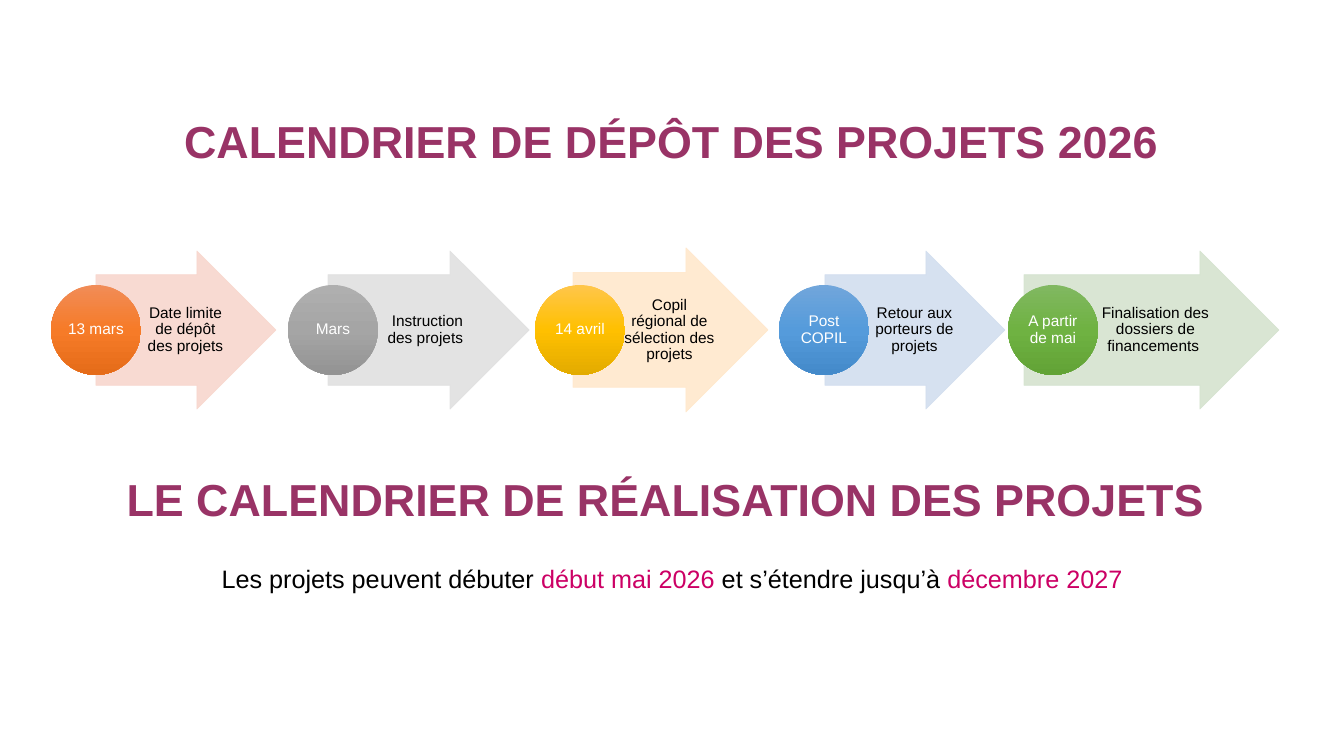
"""Build a slide with the project submission calendar and the delivery period."""
from copy import deepcopy

from lxml.etree import SubElement
from pptx import Presentation
from pptx.dml.color import RGBColor
from pptx.enum.shapes import MSO_SHAPE as Shape
from pptx.enum.text import MSO_ANCHOR as Anchor, PP_ALIGN as Align
from pptx.oxml.ns import qn
from pptx.util import Pt

PX = 9071
PLUM, MAGENTA, BLACK, WHITE = "993366", "CC0065", "000000", "FFFFFF"
MIDDLE_Y = 330
DIAMETER = 90
STEP_HEIGHT = 110

colour = RGBColor.from_string


def write_text(shape, *runs, size, bold=False, spacing=0.9,
               anchor=Anchor.MIDDLE, margins=(10, 5, 10, 5)):
    """Fill a shape with one centred paragraph of (text, colour) runs."""
    frame = shape.text_frame
    frame.word_wrap = True
    frame.vertical_anchor = anchor
    left, top, right, bottom = margins
    frame.margin_left, frame.margin_top = left * PX, top * PX
    frame.margin_right, frame.margin_bottom = right * PX, bottom * PX
    paragraph = frame.paragraphs[0]
    paragraph.alignment = Align.CENTER
    paragraph.line_spacing = spacing
    for text, hex_colour in runs:
        run = paragraph.add_run()
        run.text = text
        run.font.name = "Arial"
        run.font.size = Pt(size)
        run.font.bold = bold
        run.font.color.rgb = colour(hex_colour)


presentation = Presentation()
presentation.slide_width = 1344 * PX
presentation.slide_height = 756 * PX
slide = presentation.slides.add_slide(presentation.slide_layouts[5])
shapes = slide.shapes

title = shapes.title
title.left, title.top, title.width, title.height = 118 * PX, 112 * PX, 1107 * PX, 64 * PX
write_text(title, ("CALENDRIER DE DÉPÔT DES PROJETS 2026", PLUM), size=32, bold=True)

subtitle = shapes.add_textbox(57 * PX, 473 * PX, 1230 * PX, 103 * PX)
write_text(subtitle, ("LE CALENDRIER DE RÉALISATION DES PROJETS ", PLUM),
           size=32, bold=True, anchor=Anchor.TOP)

period = shapes.add_textbox(193 * PX, 558 * PX, 958 * PX, 40 * PX)
write_text(period, ("Les projets peuvent débuter ", BLACK), ("début mai 2026 ", MAGENTA),
           ("et s’étendre jusqu’à ", BLACK), ("décembre 2027", MAGENTA),
           size=18, spacing=1.0, anchor=Anchor.TOP)

stages = [
    ("13 mars", "Date limite de dépôt des projets",
     51, 96, 180, 158, 88, "F8D7CE", ("F18C57", "F67B28", "E56C19")),
    ("Mars", "Instruction des projets ",
     288, 328, 201, 158, 98, "E1E1E1", ("AFAFAF", "A5A5A5", "939393")),
    ("14 avril", "Copil régional de sélection des projets",
     535, 573, 195, 164, 96, "FFE8CC", ("FFC64B", "FFC000", "E3AB00")),
    ("Post COPIL", "Retour aux porteurs de projets",
     779, 825, 180, 158, 88, "D2DEEF", ("71A6DB", "559BDB", "448ACA")),
    ("A partir de mai", "Finalisation des dossiers de financements ",
     1008, 1024, 255, 158, 136, "D5E3CF", ("81B861", "6FB242", "62A336")),
]

for (date, step, circle_left, arrow_left, width, height,
     step_width, tint, gradient) in stages:
    arrow = shapes.add_shape(Shape.RIGHT_ARROW, arrow_left * PX,
                             (MIDDLE_Y - height // 2) * PX, width * PX, height * PX)
    arrow.adjustments[0], arrow.adjustments[1] = 0.7, 0.5
    arrow.shadow.inherit = False
    arrow.fill.solid()
    arrow.fill.fore_color.rgb = colour(tint)
    arrow.line.color.rgb = colour(tint)
    arrow.line.width = Pt(0.5)
    for tint_element in list(arrow._element.spPr.iter(qn("a:srgbClr"))):
        SubElement(tint_element, qn("a:alpha"), val="90000")

    label = shapes.add_textbox((arrow_left + width // 4) * PX,
                               (MIDDLE_Y - STEP_HEIGHT // 2) * PX,
                               step_width * PX, STEP_HEIGHT * PX)
    write_text(label, (step, BLACK), size=11, margins=(2, 1, 1, 1))

    circle = shapes.add_shape(Shape.OVAL, circle_left * PX, (MIDDLE_Y - DIAMETER // 2) * PX,
                              DIAMETER * PX, DIAMETER * PX)
    circle.shadow.inherit = False
    circle.line.fill.background()
    circle.fill.gradient()
    circle.fill.gradient_angle = 270
    stop_list = circle._element.spPr.find(".//" + qn("a:gsLst"))
    stop_list.append(deepcopy(stop_list[-1]))
    for stop, position, hex_colour in zip(circle.fill.gradient_stops, (0, 0.5, 1), gradient):
        stop.position = position
        stop.color.rgb = colour(hex_colour)
    write_text(circle, (date, WHITE), size=11, margins=(1, 1, 1, 1))

presentation.save("out.pptx")
